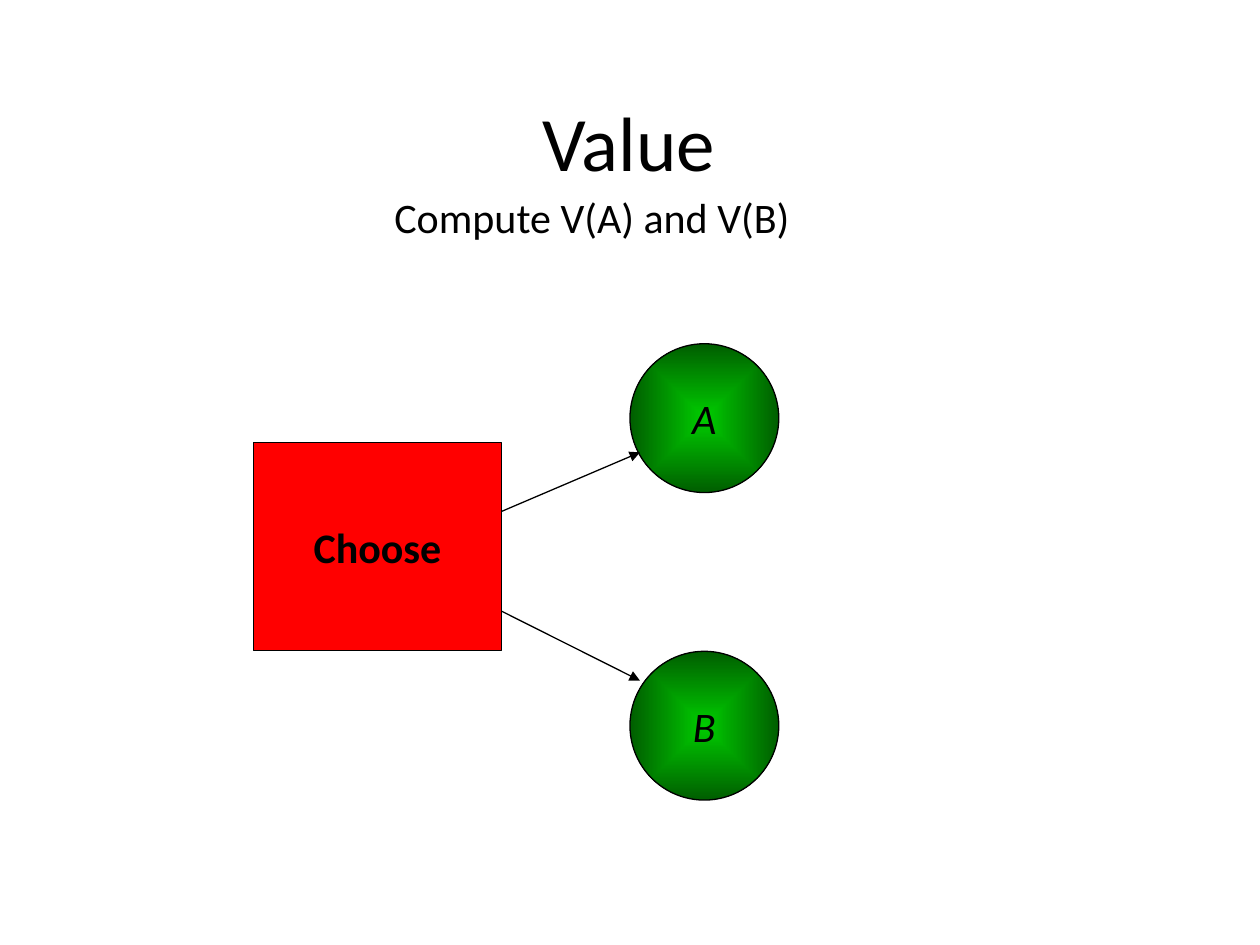
"""Build the Value slide: one choice leading to outcomes A and B."""
from lxml import etree
from pptx import Presentation
from pptx import util as u
from pptx.dml.color import RGBColor
from pptx.enum import shapes, text
from pptx.oxml.ns import qn

BLACK = RGBColor(0, 0, 0)
RED = RGBColor(255, 0, 0)
LIME = RGBColor(0, 0xCC, 0)
GREEN = RGBColor(0, 0x5E, 0)


def cm(*nums):
    """Turn numbers into centimetre lengths."""
    return [u.Cm(n) for n in nums]


def write(shape, words, size=24, bold=False, italic=False, wrap=False,
          align=text.PP_ALIGN.CENTER, anchor=text.MSO_ANCHOR.MIDDLE):
    """Put formatted words in a shape."""
    frame = shape.text_frame
    frame.word_wrap = wrap
    frame.vertical_anchor = anchor
    par = frame.paragraphs[0]
    par.alignment = align
    run = par.add_run()
    run.text = words
    font = run.font
    font.name, font.size = "Calibri", u.Pt(size)
    font.bold, font.italic = bold, italic
    font.color.rgb = BLACK


def ink(line):
    """Give a line the thin black style."""
    line.color.rgb = BLACK
    line.width = u.Pt(0.75)


def node(slide, kind, box, words, **style):
    """Add an outlined shape with a label."""
    shape = slide.shapes.add_shape(kind, *cm(*box))
    shape.shadow.inherit = False
    ink(shape.line)
    write(shape, words, **style)
    return shape


def glow(shape):
    """Fill a shape with green that darkens from its centre."""
    shape.fill.gradient()
    for stop, shade in zip(shape.fill.gradient_stops, (LIME, GREEN)):
        stop.color.rgb = shade
    grad = shape._element.spPr.find(qn("a:gradFill"))
    grad.remove(grad.find(qn("a:lin")))
    way = etree.SubElement(grad, qn("a:path"), path="shape")
    etree.SubElement(way, qn("a:fillToRect"),
                     l="50000", t="50000", r="50000", b="50000")


def arrow(slide, *ends):
    """Add a straight arrow between two points."""
    link = slide.shapes.add_connector(
        shapes.MSO_CONNECTOR.STRAIGHT, *cm(*ends))
    ink(link.line)
    etree.SubElement(link.line._get_or_add_ln(), qn("a:tailEnd"),
                     type="triangle")
    etree.SubElement(link._element.spPr, qn("a:effectLst"))


def main():
    """Build and save the slide."""
    deck = Presentation()
    deck.slide_width, deck.slide_height = cm(25.4, 19.05)
    slide = deck.slides.add_slide(deck.slide_layouts[5])

    title = slide.shapes.title
    title.left, title.top, title.width, title.height = cm(
        0.89, 1.73, 23.57, 2.21)
    write(title, "Value", size=44, wrap=True)

    for name, top in (("B", 13.13), ("A", 6.93)):
        ball = node(slide, shapes.MSO_SHAPE.OVAL, (12.7, top, 3, 3),
                    name, italic=True)
        glow(ball)

    for start, end in ((10.31, 9.12), (12.32, 13.72)):
        arrow(slide, 10.11, start, 12.9, end)

    task = slide.shapes.add_textbox(*cm(7.7, 3.73, 11, 1.27))
    write(task, "Compute V(A) and V(B)", wrap=True,
          align=text.PP_ALIGN.LEFT, anchor=text.MSO_ANCHOR.TOP)

    pick = node(slide, shapes.MSO_SHAPE.RECTANGLE, (5.11, 8.92, 5, 4.2),
                "Choose", bold=True)
    pick.fill.solid()
    pick.fill.fore_color.rgb = RED

    deck.save("out.pptx")


if __name__ == "__main__":
    main()
